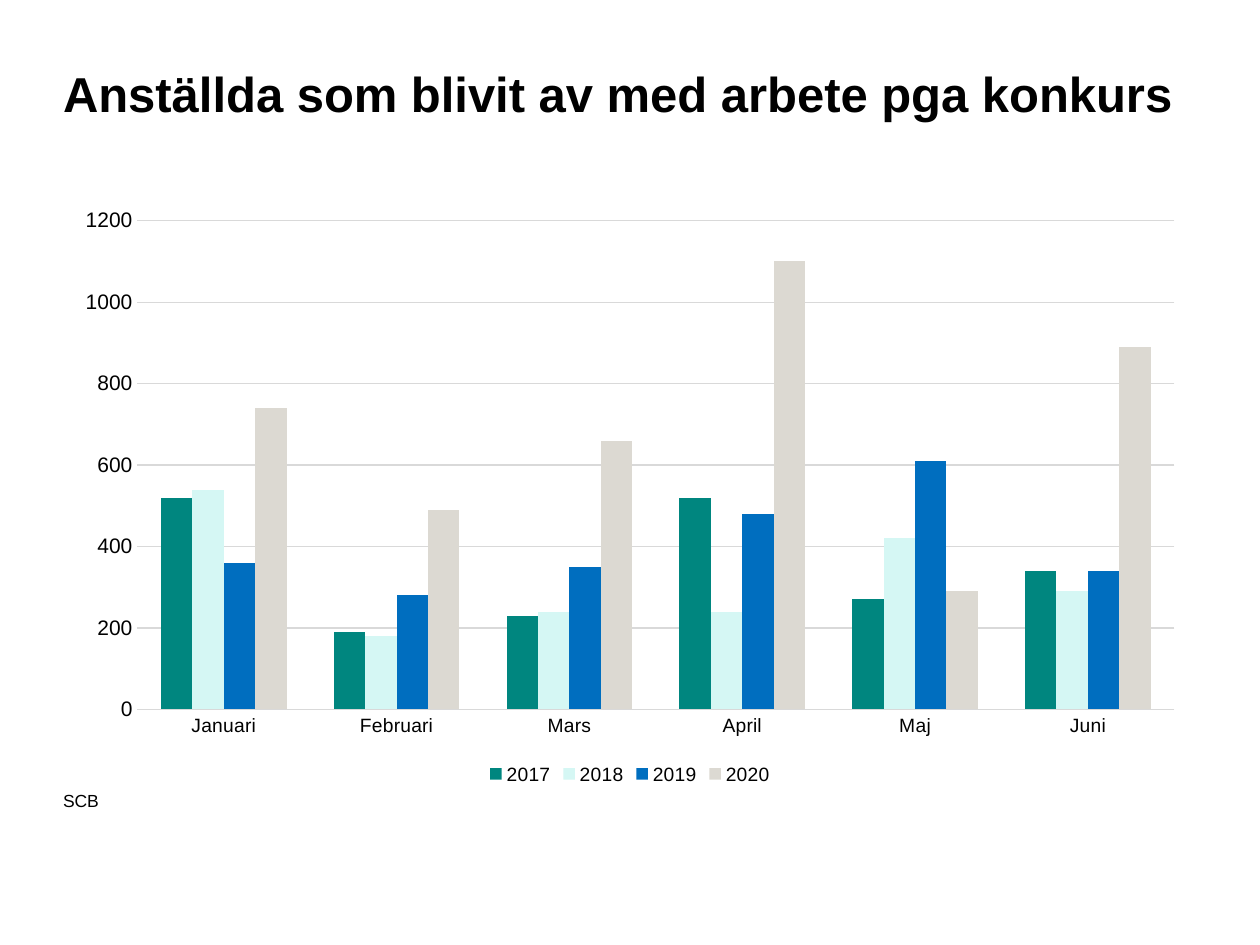
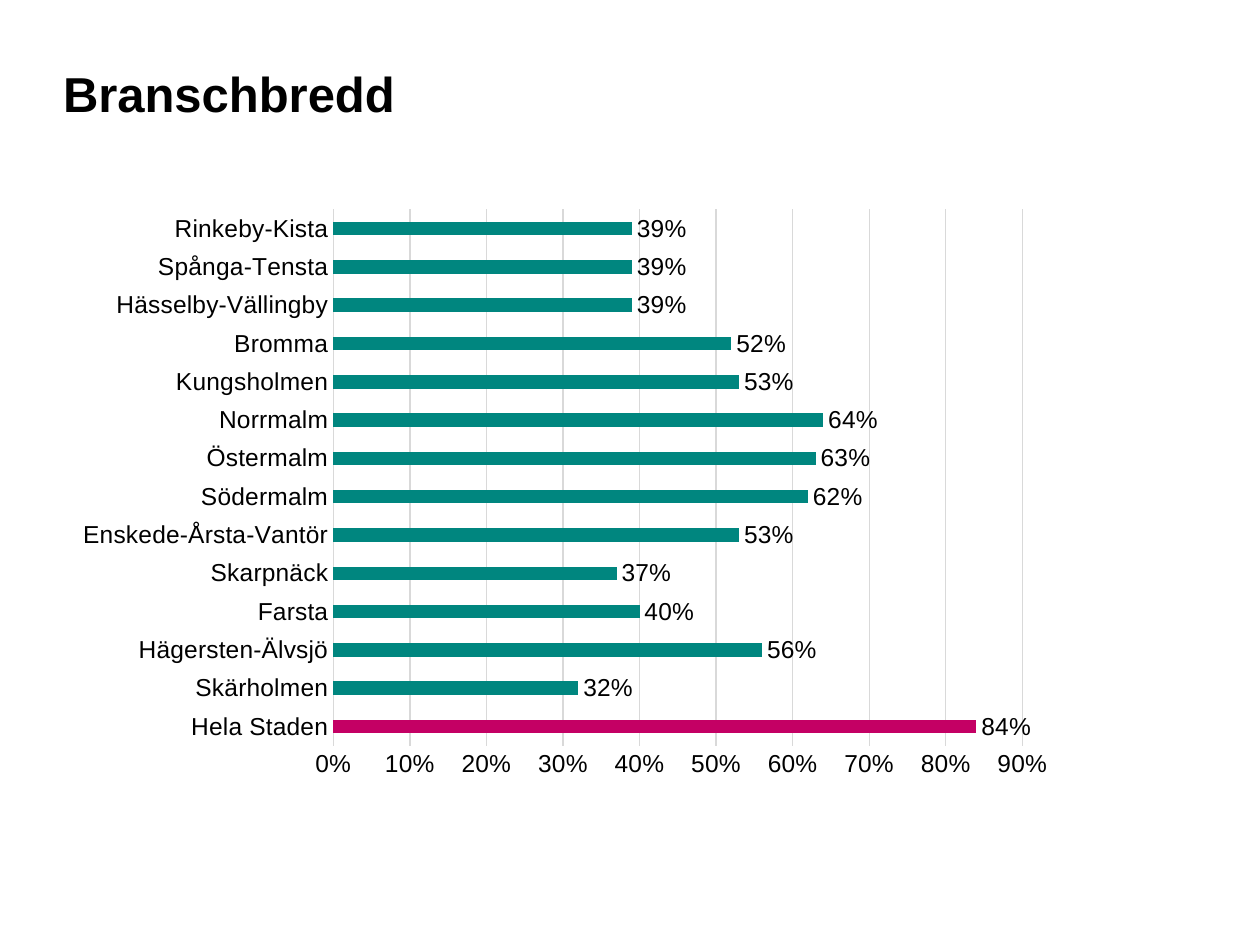
from lxml import etree
from pptx import Presentation
from pptx.chart import data
from pptx.dml.color import RGBColor
from pptx.enum import chart as kinds
from pptx.enum import text
from pptx.oxml import ns
from pptx.util import Pt

BLACK = RGBColor(0x00, 0x00, 0x00)
GRID = RGBColor(0xD9, 0xD9, 0xD9)
TEAL = RGBColor(0x00, 0x86, 0x7F)
MINT = RGBColor(0xD5, 0xF7, 0xF4)
BLUE = RGBColor(0x00, 0x6E, 0xBF)
SAND = RGBColor(0xDC, 0xD9, 0xD2)
MAGENTA = RGBColor(0xC4, 0x00, 0x64)

TITLE_AND_CONTENT, TITLE_ONLY = 1, 5
MARGIN = 36
CHART_TOP, CHART_HEIGHT = 113, 338.5

MONTHS = ["Januari", "Februari", "Mars", "April", "Maj", "Juni"]
EMPLOYEES_BY_YEAR = {
    "2017": (TEAL, [520, 190, 230, 520, 270, 340]),
    "2018": (MINT, [540, 180, 240, 240, 420, 290]),
    "2019": (BLUE, [360, 280, 350, 480, 610, 340]),
    "2020": (SAND, [740, 490, 660, 1100, 290, 890]),
}
BREADTH_BY_DISTRICT = {
    "Hela Staden": 0.84,
    "Skärholmen": 0.32,
    "Hägersten-Älvsjö": 0.56,
    "Farsta": 0.40,
    "Skarpnäck": 0.37,
    "Enskede-Årsta-Vantör": 0.53,
    "Södermalm": 0.62,
    "Östermalm": 0.63,
    "Norrmalm": 0.64,
    "Kungsholmen": 0.53,
    "Bromma": 0.52,
    "Hässelby-Vällingby": 0.39,
    "Spånga-Tensta": 0.39,
    "Rinkeby-Kista": 0.39,
}


def assign(target, values):
    for name, value in values.items():
        setattr(target, name, value)


def paint(bar, color):
    bar.format.fill.solid()
    bar.format.fill.fore_color.rgb = color


class Deck:
    """Holds the shared style and the slide being filled."""

    def __init__(self):
        self.deck = Presentation()
        assign(self.deck, {"slide_width": Pt(720), "slide_height": Pt(540)})
        self.slide = None

    def add_slide(self, layout, heading):
        self.slide = self.deck.slides.add_slide(self.deck.slide_layouts[layout])
        self.fill_holder(self.slide.shapes.title, heading, (MARGIN, 36, 648, 65.5), 28, True)

    def style_font(self, font, size, bold=False):
        assign(font, {"name": "Arial", "size": Pt(size), "bold": bold})
        font.color.rgb = BLACK

    def fill_holder(self, holder, words, box, size, bold=False):
        assign(holder, dict(zip(("left", "top", "width", "height"), map(Pt, box))))
        frame = holder.text_frame
        assign(frame, {
            "text": words, "word_wrap": True,
            "auto_size": text.MSO_AUTO_SIZE.NONE,
            "vertical_anchor": text.MSO_ANCHOR.TOP,
            "margin_left": 0, "margin_top": 0, "margin_right": 0, "margin_bottom": 0,
        })
        line = frame.paragraphs[0]
        line.alignment = text.PP_ALIGN.LEFT
        self.style_font(line.runs[0].font, size, bold)
        return line

    def add_source(self, words):
        holder = self.slide.placeholders[1]
        line = self.fill_holder(holder, words, (MARGIN, 451.5, 573, 14.5), 10)
        line.space_after = Pt(6)
        properties = line._p.get_or_add_pPr()
        for side in ("marL", "indent"):
            properties.set(side, "0")
        etree.SubElement(properties, ns.qn("a:buNone"))

    def add_bars(self, kind, categories, series, width, gap, sizes, scale, number_format):
        """Adds a chart; sizes holds the category and value axis text sizes."""
        content = data.CategoryChartData(number_format=number_format)
        content.categories = categories
        for name, (_, values) in series.items():
            content.add_series(name, values)
        chart = self.slide.shapes.add_chart(
            kind, Pt(MARGIN), Pt(CHART_TOP), Pt(width), Pt(CHART_HEIGHT), content).chart
        assign(chart, {"has_title": False, "has_legend": False})
        self.style_font(chart.font, sizes[0])

        for axis, size in zip((chart.category_axis, chart.value_axis), sizes):
            assign(axis, {"major_tick_mark": kinds.XL_TICK_MARK.NONE,
                          "minor_tick_mark": kinds.XL_TICK_MARK.NONE})
            self.style_font(axis.tick_labels.font, size)
        assign(chart.value_axis, {"has_major_gridlines": True, "minimum_scale": 0,
                                  "maximum_scale": scale[0], "major_unit": scale[1]})
        assign(chart.value_axis.tick_labels,
               {"number_format": number_format, "number_format_is_linked": False})
        chart.value_axis.format.line.fill.background()
        for holder in (chart.category_axis, chart.value_axis.major_gridlines):
            holder.format.line.color.rgb = GRID
            holder.format.line.width = Pt(0.75)

        plot = chart.plots[0]
        assign(plot, {"gap_width": gap, "overlap": 0, "vary_by_categories": False})
        for bars, (color, _) in zip(plot.series, series.values()):
            paint(bars, color)
        return chart

    def add_legend(self, chart, size):
        chart.has_legend = True
        assign(chart.legend, {"position": kinds.XL_LEGEND_POSITION.BOTTOM,
                              "include_in_layout": False})
        self.style_font(chart.legend.font, size)

    def label_values(self, bars, size, number_format):
        labels = bars.data_labels
        assign(labels, {"show_value": True, "number_format": number_format,
                        "number_format_is_linked": False,
                        "position": kinds.XL_LABEL_POSITION.OUTSIDE_END})
        self.style_font(labels.font, size)


def main():
    deck = Deck()

    deck.add_slide(TITLE_AND_CONTENT, "Anställda som blivit av med arbete pga konkurs")
    deck.add_source("SCB")
    employees = deck.add_bars(
        kinds.XL_CHART_TYPE.COLUMN_CLUSTERED, MONTHS, EMPLOYEES_BY_YEAR,
        width=648, gap=150, sizes=(11, 12), scale=(1200, 200), number_format="0")
    deck.add_legend(employees, 11)

    deck.add_slide(TITLE_ONLY, "Branschbredd")
    breadth = deck.add_bars(
        kinds.XL_CHART_TYPE.BAR_CLUSTERED, list(BREADTH_BY_DISTRICT),
        {"Branschbredd": (TEAL, list(BREADTH_BY_DISTRICT.values()))},
        width=574, gap=182, sizes=(14, 14), scale=(0.9, 0.1), number_format="0%")
    districts = breadth.plots[0].series[0]
    deck.label_values(districts, 14, "0%")
    paint(districts.points[0], MAGENTA)

    deck.deck.save("out.pptx")


if __name__ == "__main__":
    main()
